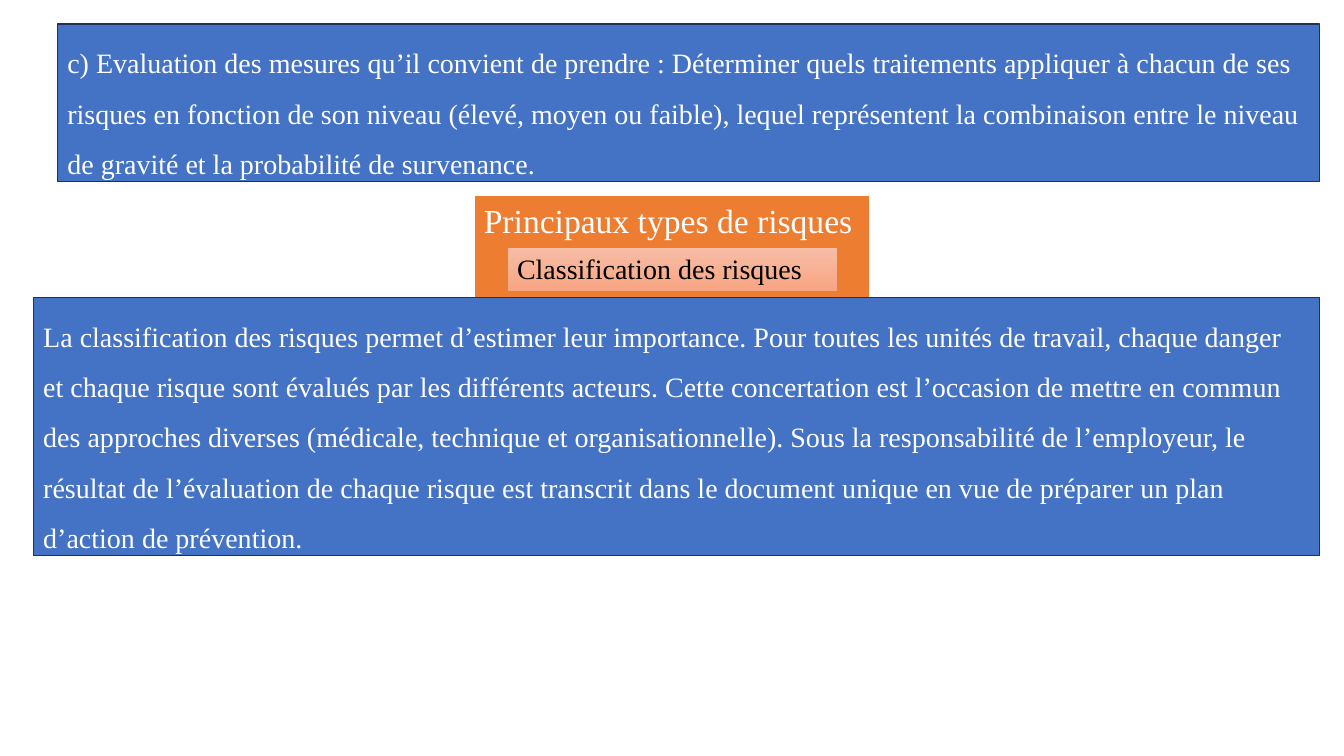
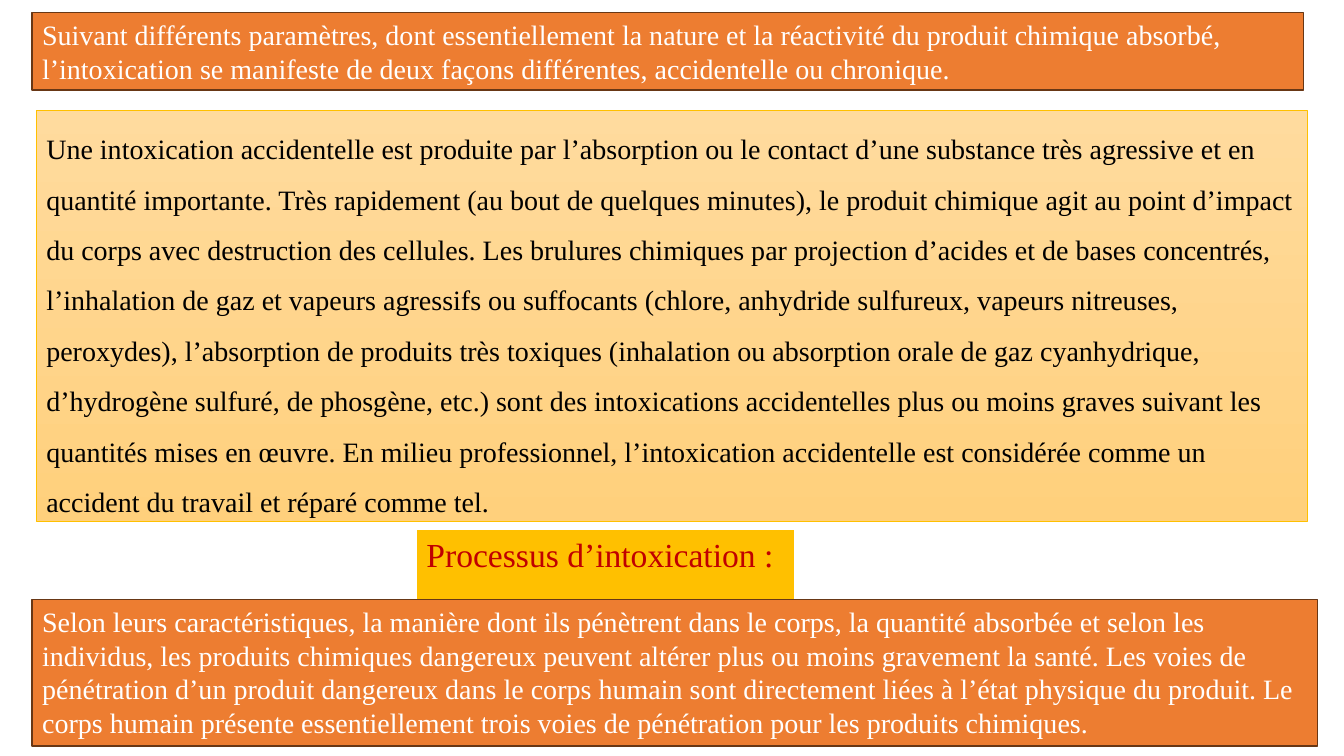
import pptx
import pptx.dml.color
import pptx.enum.shapes
import pptx.enum.text
import pptx.util

Pt = pptx.util.Pt
RGBColor = pptx.dml.color.RGBColor

# Shared style
FONT_NAME = "Times New Roman"
BODY_SIZE = 20
TITLE_SIZE = 24
WIDE_SPACING = 1.5

WHITE = RGBColor(0xFF, 0xFF, 0xFF)
BLACK = RGBColor(0x00, 0x00, 0x00)
BLUE = RGBColor(0x44, 0x72, 0xC4)
DARK_BLUE = RGBColor(0x1E, 0x32, 0x56)
ORANGE = RGBColor(0xED, 0x7D, 0x31)
DARK_ORANGE = RGBColor(0x68, 0x37, 0x15)
GOLD = RGBColor(0xFF, 0xC0, 0x00)
RED = RGBColor(0xC0, 0x00, 0x00)
PEACH_TOP = RGBColor(0xF7, 0xBD, 0xA5)
PEACH_BOTTOM = RGBColor(0xF8, 0xA5, 0x82)
CREAM_TOP = RGBColor(0xFF, 0xDB, 0x9E)
CREAM_BOTTOM = RGBColor(0xFF, 0xD0, 0x7C)

# Panel styles: fill colours (two make a gradient), line colour, line width, text colour
BLUE_PANEL = ([BLUE], DARK_BLUE, 1, WHITE)
ORANGE_PANEL = ([ORANGE], DARK_ORANGE, 1, WHITE)
PEACH_PANEL = ([PEACH_TOP, PEACH_BOTTOM], ORANGE, 0.5, BLACK)
CREAM_PANEL = ([CREAM_TOP, CREAM_BOTTOM], GOLD, 0.5, BLACK)
ORANGE_TITLE = ([ORANGE], WHITE, 1.5, WHITE)
GOLD_TITLE = ([GOLD], WHITE, 1.5, RED)

# Wording
MEASURES = (
    "c) Evaluation des mesures qu’il convient de prendre : Déterminer quels traitements "
    "appliquer à chacun de ses risques en fonction de son niveau (élevé, moyen ou faible), "
    "lequel représentent la combinaison entre le niveau de gravité et la probabilité de "
    "survenance."
)
CLASSIFICATION = (
    "La classification des risques permet d’estimer leur importance. Pour toutes les unités "
    "de travail, chaque danger et chaque risque sont évalués par les différents acteurs. "
    "Cette concertation est l’occasion de mettre en commun des approches diverses (médicale, "
    "technique et organisationnelle). Sous la responsabilité de l’employeur, le résultat de "
    "l’évaluation de chaque risque est transcrit dans le document unique en vue de préparer "
    "un plan d’action de prévention."
)
TWO_FORMS = (
    "Suivant différents paramètres, dont essentiellement la nature et la réactivité du "
    "produit chimique absorbé, l’intoxication se manifeste de deux façons différentes, "
    "accidentelle ou chronique."
)
ACCIDENTAL = (
    "Une intoxication accidentelle est produite par l’absorption ou le contact d’une "
    "substance très agressive et en quantité importante. Très rapidement (au bout de quelques "
    "minutes), le produit chimique agit au point d’impact du corps avec destruction des "
    "cellules. Les brulures chimiques par projection d’acides et de bases concentrés, "
    "l’inhalation de gaz et vapeurs agressifs ou suffocants (chlore, anhydride sulfureux, "
    "vapeurs nitreuses, peroxydes), l’absorption de produits très toxiques (inhalation ou "
    "absorption orale de gaz cyanhydrique, d’hydrogène sulfuré, de phosgène, etc.) sont des "
    "intoxications accidentelles plus ou moins graves suivant les quantités mises en œuvre. "
    "En milieu professionnel, l’intoxication accidentelle est considérée comme un accident du "
    "travail et réparé comme tel."
)
PENETRATION = (
    "Selon leurs caractéristiques, la manière dont ils pénètrent dans le corps, la quantité "
    "absorbée et selon les individus, les produits chimiques dangereux peuvent altérer plus "
    "ou moins gravement la santé. Les voies de pénétration d’un produit dangereux dans le "
    "corps humain sont directement liées à l’état physique du produit. Le corps humain "
    "présente essentiellement trois voies de pénétration pour les produits chimiques."
)


def style_box(shape, style):
    """Apply the fill and line of a panel style."""
    fills, line_color, line_width, _ = style
    if len(fills) == 1:
        shape.fill.solid()
        shape.fill.fore_color.rgb = fills[0]
    else:
        shape.fill.gradient()
        shape.fill.gradient_angle = 270
        for stop, color in zip(shape.fill.gradient_stops, fills):
            stop.color.rgb = color
    shape.line.color.rgb = line_color
    shape.line.width = Pt(line_width)


def write_text(shape, text, size, color, spacing):
    """Write one left-aligned paragraph from the top of the shape."""
    frame = shape.text_frame
    frame.text = text
    frame.word_wrap = True
    frame.auto_size = pptx.enum.text.MSO_AUTO_SIZE.SHAPE_TO_FIT_TEXT
    frame.vertical_anchor = pptx.enum.text.MSO_ANCHOR.TOP
    paragraph = frame.paragraphs[0]
    paragraph.alignment = pptx.enum.text.PP_ALIGN.LEFT
    paragraph.line_spacing = spacing
    font = paragraph.runs[0].font
    font.name = FONT_NAME
    font.size = Pt(size)
    font.color.rgb = color


def add_panel(slide, box, text, style, spacing=1.0):
    """Add a bordered rectangle of body text."""
    shape = slide.shapes.add_shape(
        pptx.enum.shapes.MSO_SHAPE.RECTANGLE, *[Pt(length) for length in box]
    )
    shape.shadow.inherit = False
    style_box(shape, style)
    write_text(shape, text, BODY_SIZE, style[-1], spacing)


def add_titled_slide(presentation, box, text, style):
    """Add a title-only slide with its title as a coloured band."""
    slide = presentation.slides.add_slide(presentation.slide_layouts[5])
    title = slide.shapes.title
    title.left, title.top, title.width, title.height = [Pt(length) for length in box]
    style_box(title, style)
    write_text(title, text, TITLE_SIZE, style[-1], 1.0)
    return slide


def add_risk_types_slide(presentation):
    slide = add_titled_slide(
        presentation, (338.4, 139, 283, 36), "Principaux types de risques", ORANGE_TITLE
    )
    add_panel(slide, (41, 17.3, 901.5, 112.3), MEASURES, BLUE_PANEL, WIDE_SPACING)
    add_panel(slide, (362.2, 176.4, 236.2, 31.7), "Classification des risques", PEACH_PANEL)
    add_panel(slide, (23.8, 212.4, 918.7, 184.3), CLASSIFICATION, BLUE_PANEL, WIDE_SPACING)


def add_intoxication_slide(presentation):
    slide = add_titled_slide(
        presentation, (297.4, 378, 270.7, 36), "Processus d’intoxication :", GOLD_TITLE
    )
    add_panel(slide, (23, 9, 908, 55.4), TWO_FORMS, ORANGE_PANEL)
    add_panel(slide, (26, 78.5, 908, 293.8), ACCIDENTAL, CREAM_PANEL, WIDE_SPACING)
    add_panel(slide, (23, 428.4, 918, 104.4), PENETRATION, ORANGE_PANEL)


def main():
    presentation = pptx.Presentation()
    presentation.slide_width = Pt(960)
    presentation.slide_height = Pt(540)
    add_risk_types_slide(presentation)
    add_intoxication_slide(presentation)
    presentation.save("out.pptx")


if __name__ == "__main__":
    main()
